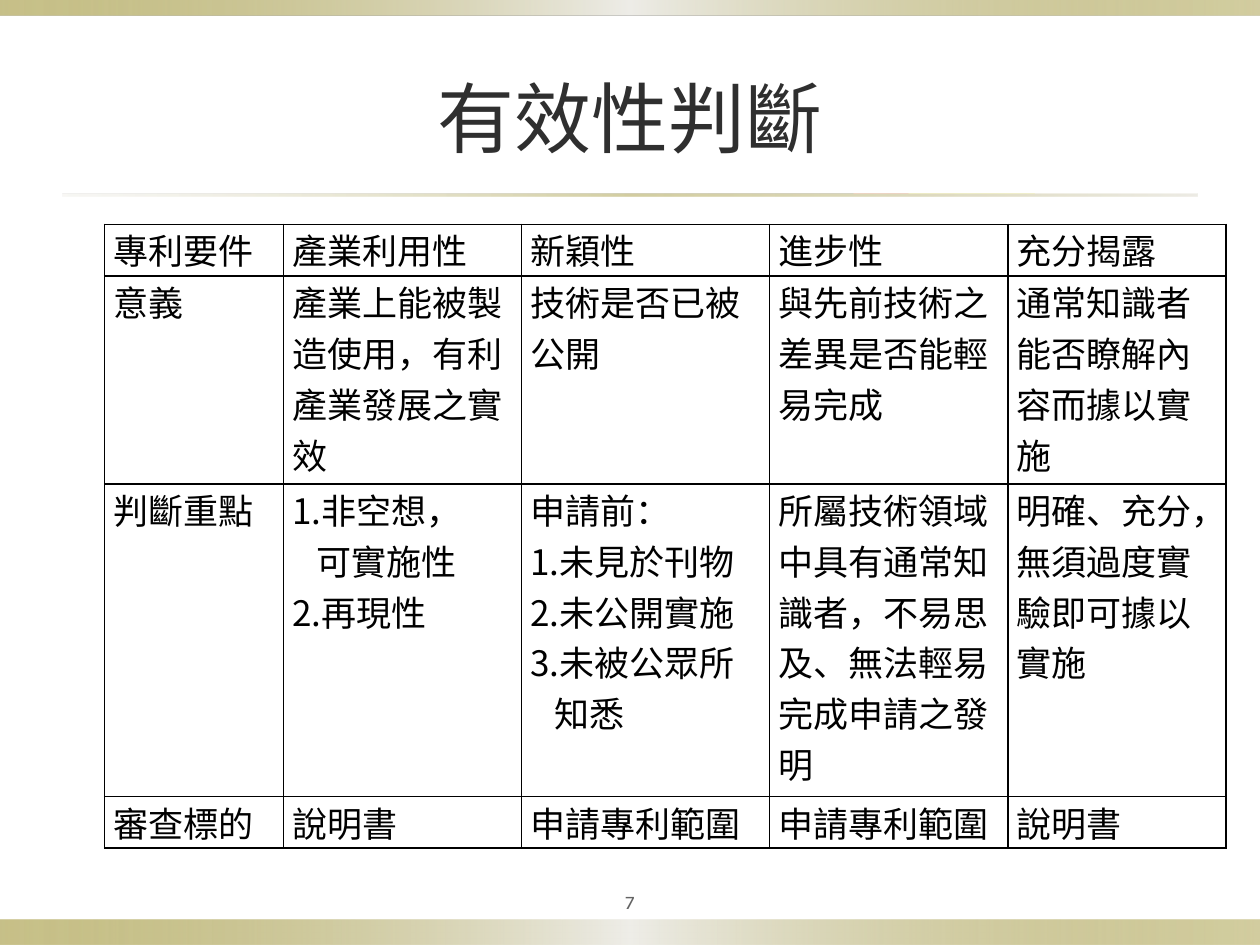
from lxml import etree
from pptx import Presentation
from pptx.dml.color import RGBColor
from pptx.enum.shapes import MSO_SHAPE
from pptx.enum.text import MSO_ANCHOR, PP_ALIGN
from pptx.oxml import parse_xml
from pptx.oxml.ns import nsdecls, qn
from pptx.util import Inches, Pt

RECT = MSO_SHAPE.RECTANGLE
MID = MSO_ANCHOR.MIDDLE
CENTER = PP_ALIGN.CENTER
WIDE, HIGH = 10, 7.5
LATIN, HAN = "Karla", "Noto Sans CJK TC"
BAND = [(0, "918415", 50), (50, "EEEDE8", 100), (100, "918415", 40)]
RULE = [(0, "DCD9CC", 20), (50, "918415", 40), (100, "DCD9CC", 50)]
COLS = [1.42, 1.89, 1.97, 1.89, 1.73]
ROWS = [0.41, 1.65, 2.48, 0.41]
DENT = "\t"
CELLS = [
    ["專利要件", "產業利用性", "新穎性", "進步性", "充分揭露"],
    ["意義", "產業上能被製造使用，有利產業發展之實效", "技術是否已被公開",
     "與先前技術之差異是否能輕易完成", "通常知識者能否瞭解內容而據以實施"],
    ["判斷重點", "1.非空想，\n\t可實施性\n2.再現性",
     "申請前：\n1.未見於刊物\n2.未公開實施\n3.未被公眾所\n\t知悉",
     "所屬技術領域中具有通常知識者，不易思及、無法輕易完成申請之發明",
     "明確、充分，無須過度實驗即可據以實施"],
    ["審查標的", "說明書", "申請專利範圍", "申請專利範圍", "說明書"],
]


def color(code):
    """Turn a hex string into a colour."""
    return RGBColor.from_string(code)


def place(box):
    """Turn a box in inches into lengths."""
    return [Inches(n) for n in box]


def style(para, size, code, face):
    """Format every run of a paragraph."""
    for run in para.runs:
        run.font.size = Pt(size)
        run.font.color.rgb = color(code)
        run.font.name = face
        east = etree.SubElement(run.font._element, qn("a:ea"))
        east.set("typeface", HAN)


def inset(frame, side):
    """Give a text frame equal margins."""
    frame.margin_left = frame.margin_right = Inches(side)
    frame.margin_top = frame.margin_bottom = Inches(side)


def add_band(slide, box, stops):
    """Draw a bar with a see-through gradient."""
    bar = slide.shapes.add_shape(RECT, *place(box))
    bar.shadow.inherit = False
    bar.line.fill.background()
    bar.fill.gradient()
    bar.fill.gradient_angle = 0
    stop_list = bar._element.spPr.find(".//" + qn("a:gsLst"))
    for old in list(stop_list):
        stop_list.remove(old)
    for spot, code, alpha in stops:
        stop_list.append(parse_xml(
            f'<a:gs {nsdecls("a")} pos="{spot * 1000}"><a:srgbClr val="{code}">'
            f'<a:alpha val="{alpha * 1000}"/></a:srgbClr></a:gs>'))


def add_title(slide, box, text):
    """Fill and move the title placeholder."""
    title = slide.shapes.title
    title.left, title.top, title.width, title.height = place(box)
    frame = title.text_frame
    frame.text = text
    frame.vertical_anchor = MID
    frame.paragraphs[0].alignment = CENTER
    style(frame.paragraphs[0], 44, "2F2F2F", LATIN)


def add_edges(cell):
    """Draw a black line on each side of a cell."""
    props = cell._tc.get_or_add_tcPr()
    for side in "LRTB":
        props.append(parse_xml(
            f'<a:ln{side} {nsdecls("a")} w="{Pt(1)}"><a:solidFill>'
            f'<a:srgbClr val="000000"/></a:solidFill></a:ln{side}>'))


def fill_cell(cell, text):
    """Write a cell, indenting the lines marked for it."""
    cell.margin_left = cell.margin_right = Inches(0.07)
    cell.margin_top = cell.margin_bottom = 0
    add_edges(cell)
    cell.fill.background()
    lines = text.split("\n")
    cell.text_frame.text = text.replace(DENT, "")
    for para, line in zip(cell.text_frame.paragraphs, lines):
        if line.startswith(DENT):
            para._p.get_or_add_pPr().set("marL", str(Inches(0.19)))
        style(para, 20, "000000", HAN)


def add_grid(slide, box):
    """Build the table of patent conditions."""
    frame = slide.shapes.add_table(len(ROWS), len(COLS), *place(box))
    table = frame.table
    table.first_row = table.horz_banding = False
    for col, width in zip(table.columns, COLS):
        col.width = Inches(width)
    for row, height, texts in zip(table.rows, ROWS, CELLS):
        row.height = Inches(height)
        for cell, text in zip(row.cells, texts):
            fill_cell(cell, text)


def add_number(slide, box, text):
    """Write the page number."""
    frame = slide.shapes.add_textbox(*place(box)).text_frame
    frame.word_wrap = True
    frame.vertical_anchor = MID
    inset(frame, 0.05)
    frame.text = text
    frame.paragraphs[0].alignment = CENTER
    style(frame.paragraphs[0], 11, "636363", LATIN)


def main():
    """Build and save the slide."""
    deck = Presentation()
    deck.slide_width, deck.slide_height = Inches(WIDE), Inches(HIGH)
    slide = deck.slides.add_slide(deck.slide_layouts[5])
    edge = WIDE * 0.05
    span = WIDE - 2 * edge
    add_band(slide, (0, HIGH - 0.2, WIDE, 0.2), BAND)
    add_band(slide, (0, 0, WIDE, 0.12), BAND)
    add_band(slide, (edge, 1.54, span, 0.02), RULE)
    add_title(slide, (edge, 0.3, span, 1.25), "有效性判斷")
    add_grid(slide, (0.83, 1.78, sum(COLS), sum(ROWS)))
    add_number(slide, (WIDE / 2 - 0.5, 7, 1, 0.31), "7")
    deck.save("out.pptx")


if __name__ == "__main__":
    main()
